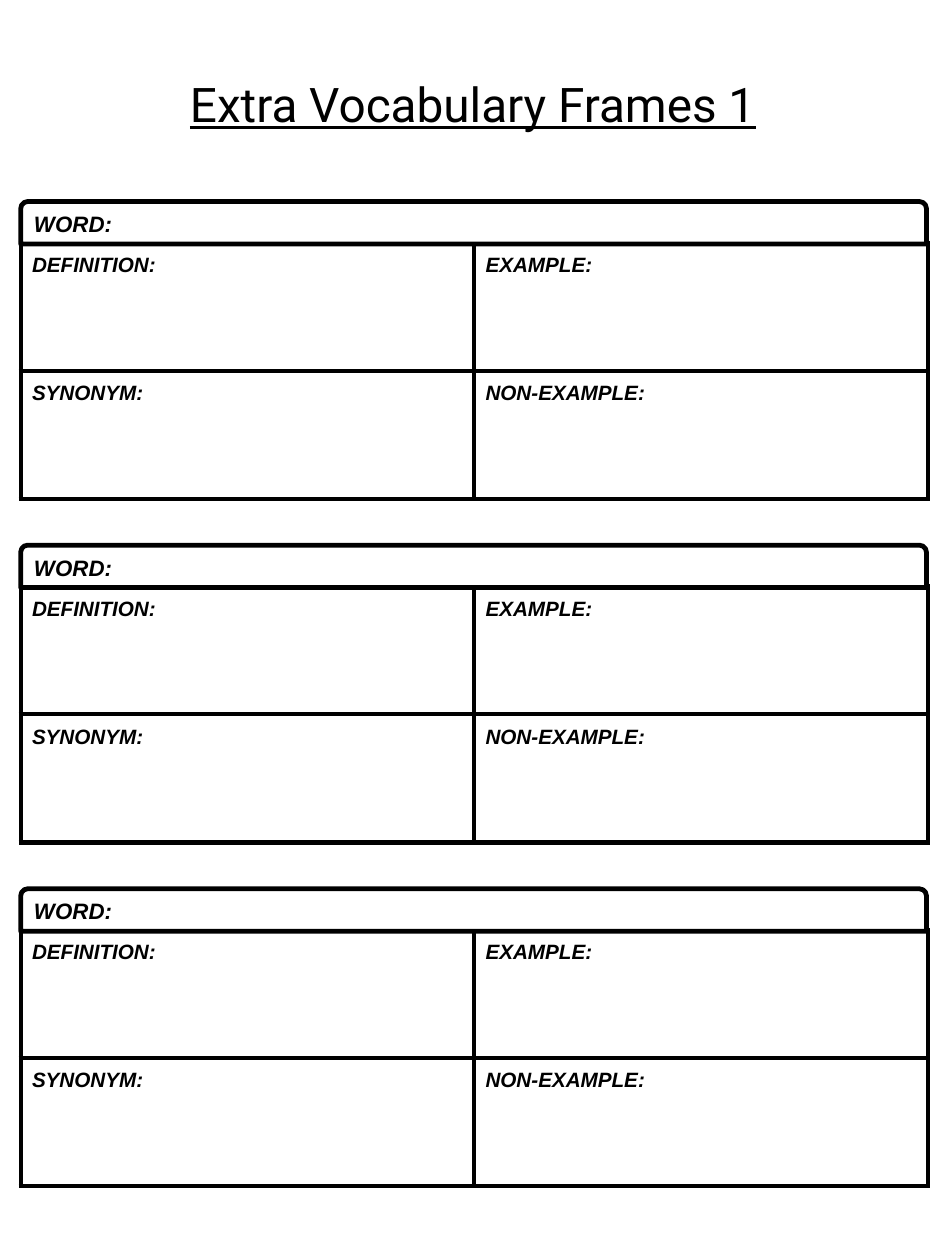
from lxml import etree
from pptx import Presentation
from pptx.dml.color import RGBColor
from pptx.enum import shapes, text
from pptx.oxml import ns
from pptx.util import Cm, Pt

TITLE = "Extra Vocabulary Frames 1"
HEADING = "WORD:"
PROMPTS = [("DEFINITION:", "EXAMPLE:"), ("SYNONYM:", "NON-EXAMPLE:")]
FRAMES = 3

LEFT, TOP, PITCH = 0.46, 4.47, 7.62
HEADING_HEIGHT, TABLE_OFFSET = 0.94, 0.91
COLUMN_WIDTH, ROW_HEIGHT = 10.06, 2.84
INSET = Cm(0.25)
BLACK, WHITE = "000000", "FFFFFF"
BORDER = Pt(3)


def color(value):
    return RGBColor.from_string(value)


def set_insets(holder):
    holder.margin_left = holder.margin_right = INSET
    holder.margin_top = holder.margin_bottom = INSET


def write(frame, words, size, name="Arial", label=True):
    para = frame.paragraphs[0]
    para.text = words
    para.font.size = Pt(size)
    para.font.name = name
    para.font.color.rgb = color(BLACK)
    para.font.bold = para.font.italic = label
    return para


def add_borders(cell):
    properties = cell._tc.get_or_add_tcPr()
    for index, side in enumerate(("lnL", "lnR", "lnT", "lnB")):
        line = etree.Element(ns.qn(f"a:{side}"), w=str(BORDER))
        fill = etree.SubElement(line, ns.qn("a:solidFill"))
        etree.SubElement(fill, ns.qn("a:srgbClr"), val=BLACK)
        properties.insert(index, line)


def add_title(page):
    box = page.shapes.add_textbox(Cm(1.65), Cm(1.42), Cm(17.68), Cm(2.21))
    box.text_frame.word_wrap = True
    set_insets(box.text_frame)
    para = write(box.text_frame, TITLE, 30, "Roboto", label=False)
    para.font.underline = True
    para.alignment = text.PP_ALIGN.CENTER


def add_prompts(page, top):
    rows, columns = len(PROMPTS), len(PROMPTS[0])
    table = page.shapes.add_table(
        rows, columns, Cm(LEFT), Cm(top),
        Cm(COLUMN_WIDTH * columns), Cm(ROW_HEIGHT * rows)).table
    table.first_row = table.horz_banding = False
    for row, prompts in enumerate(PROMPTS):
        for column, prompt in enumerate(prompts):
            cell = table.cell(row, column)
            cell.fill.background()
            set_insets(cell)
            write(cell.text_frame, prompt, 13)
            add_borders(cell)


def add_heading(page, top):
    heading = page.shapes.add_shape(
        shapes.MSO_SHAPE.ROUND_2_SAME_RECTANGLE,
        Cm(LEFT), Cm(top), Cm(20.09), Cm(HEADING_HEIGHT))
    heading.shadow.inherit = False
    heading.fill.solid()
    heading.fill.fore_color.rgb = color(WHITE)
    heading.line.color.rgb = color(BLACK)
    heading.line.width = BORDER
    set_insets(heading.text_frame)
    heading.text_frame.vertical_anchor = text.MSO_ANCHOR.MIDDLE
    para = write(heading.text_frame, HEADING, 14)
    para.alignment = text.PP_ALIGN.LEFT


def main():
    deck = Presentation()
    deck.slide_width, deck.slide_height = Cm(20.96), Cm(27.94)
    page = deck.slides.add_slide(deck.slide_layouts[6])
    add_title(page)
    for index in range(FRAMES):
        top = TOP + index * PITCH
        add_prompts(page, top + TABLE_OFFSET)
        add_heading(page, top)
    deck.save("out.pptx")


if __name__ == "__main__":
    main()
